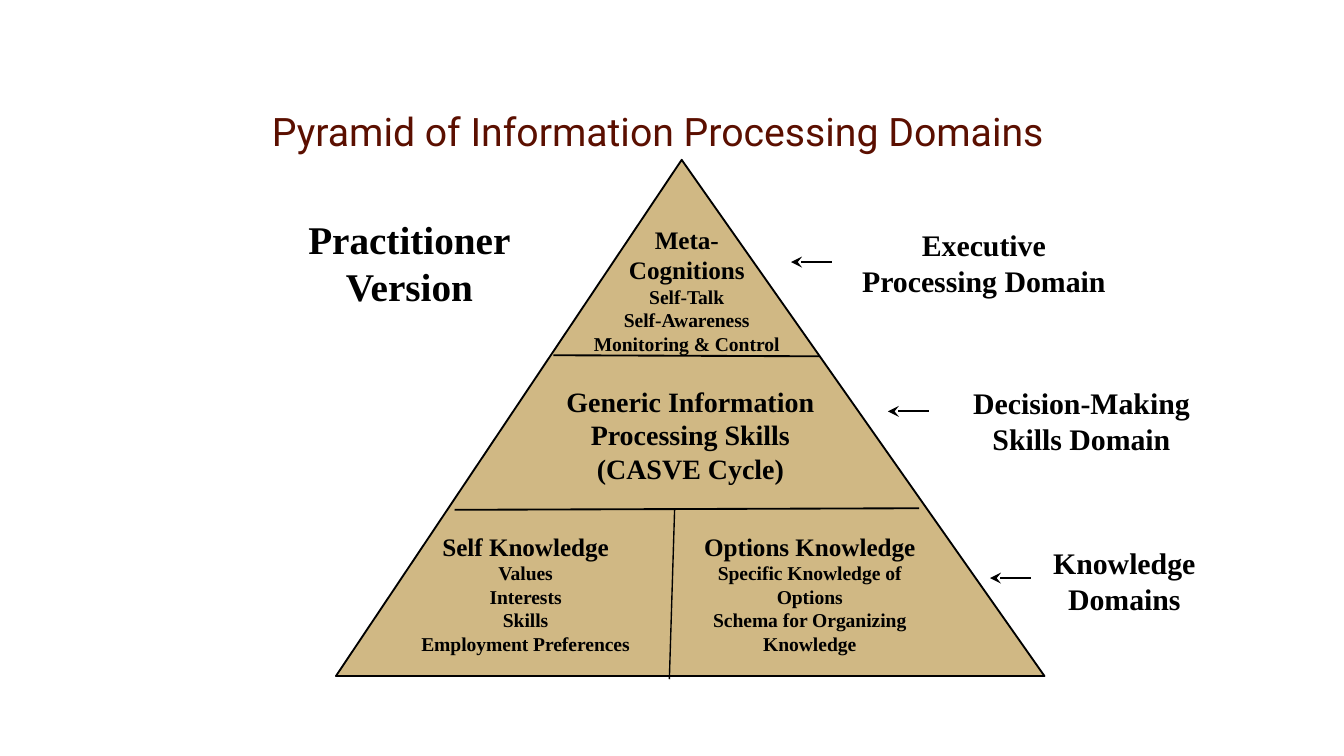
from lxml import etree
from pptx import Presentation
from pptx import util as u
from pptx.dml.color import RGBColor
from pptx.enum import shapes, text
from pptx.oxml.ns import qn

BLACK = RGBColor(0x00, 0x00, 0x00)
GOLD = RGBColor(0xD0, 0xB8, 0x84)
MAROON = RGBColor(0x5B, 0x0F, 0x00)
SERIF = "Times New Roman"
SANS = "Roboto"
HEADING, DETAIL, SKILLS, LABEL, TITLE = 13.5, 10.5, 15, 16, 21
ARROW_LENGTH = 0.77


class PyramidSlide:
    """Holds the style and the current slide; lengths are centimetres."""

    def __init__(self, slide):
        self.slide = slide

    def triangle(self, left, top, width, height, peak):
        shape = self.slide.shapes.add_shape(
            shapes.MSO_SHAPE.ISOSCELES_TRIANGLE,
            u.Cm(left), u.Cm(top), u.Cm(width), u.Cm(height))
        shape.adjustments[0] = peak
        shape.shadow.inherit = False
        shape.fill.solid()
        shape.fill.fore_color.rgb = GOLD
        shape.line.color.rgb = BLACK
        shape.line.width = u.Pt(1)

    def line(self, x1, y1, x2, y2, weight=1, arrow=False):
        connector = self.slide.shapes.add_connector(
            shapes.MSO_CONNECTOR.STRAIGHT,
            u.Cm(x1), u.Cm(y1), u.Cm(x2), u.Cm(y2))
        connector.line.color.rgb = BLACK
        connector.line.width = u.Pt(weight)
        properties = connector._element.spPr
        if arrow:
            outline = properties.find(qn("a:ln"))
            etree.SubElement(outline, qn("a:tailEnd"), type="stealth")
        etree.SubElement(properties, qn("a:effectLst"))

    def text(self, left, top, width, height, lines, font=SERIF,
             color=BLACK, bold=True, anchor=text.MSO_ANCHOR.TOP):
        """Adds centred paragraphs, each given as (wording, size)."""
        box = self.slide.shapes.add_textbox(
            u.Cm(left), u.Cm(top), u.Cm(width), u.Cm(height))
        frame = box.text_frame
        frame.word_wrap = True
        frame.vertical_anchor = anchor
        frame.margin_left = frame.margin_right = u.Cm(0.2)
        frame.margin_top = frame.margin_bottom = u.Cm(0.1)
        frame.text = "\n".join(wording for wording, size in lines)
        for paragraph, (wording, size) in zip(frame.paragraphs, lines):
            paragraph.alignment = text.PP_ALIGN.CENTER
            for run in paragraph.runs:
                run.font.name = font
                run.font.size = u.Pt(size)
                run.font.bold = bold
                run.font.color.rgb = color

    def section(self, left, top, width, height, headings, details):
        lines = [(heading, HEADING) for heading in headings]
        lines += [(detail, DETAIL) for detail in details]
        self.text(left, top, width, height, lines)


def main():
    presentation = Presentation()
    presentation.slide_width = u.Cm(25.4)
    presentation.slide_height = u.Cm(14.28)
    page = PyramidSlide(
        presentation.slides.add_slide(presentation.slide_layouts[6]))

    # Pyramid and its dividing lines
    page.triangle(6.35, 3.02, 13.39, 9.75, peak=0.488)
    page.line(10.46, 6.71, 15.49, 6.73)
    page.line(8.59, 9.63, 17.37, 9.6)
    page.line(12.75, 9.6, 12.65, 12.83, weight=0.75)

    # Title and version
    page.text(3.33, 1.6, 18.21, 1.75,
              [("Pyramid of Information Processing Domains", TITLE)],
              font=SANS, color=MAROON, bold=False,
              anchor=text.MSO_ANCHOR.MIDDLE)
    page.text(5.05, 3.96, 5.38, 1.98, [("Practitioner\vVersion", TITLE)])

    # Sections inside the pyramid
    page.section(10.87, 4.14, 4.22, 2.69, ["Meta-", "Cognitions"],
                 ["Self-Talk", "Self-Awareness", "Monitoring & Control"])
    page.text(9.75, 7.16, 6.6, 2.11,
              [("Generic Information Processing Skills", SKILLS),
               ("(CASVE Cycle)", SKILLS)])
    page.section(7.32, 9.93, 5.23, 2.57, ["Self Knowledge"],
                 ["Values", "Interests", "Skills", "Employment Preferences"])
    page.section(12.83, 9.93, 4.95, 2.57, ["Options Knowledge"],
                 ["Specific Knowledge of\vOptions",
                  "Schema for Organizing\vKnowledge"])

    # Domain labels, each with an arrow to its level
    domains = [
        ("Executive Processing Domain", (15.98, 4.19, 5.23, 2.11), (15.72, 4.95)),
        ("Decision-Making Skills Domain", (17.75, 7.16, 5.38, 1.47), (17.55, 7.77)),
        ("Knowledge Domains", (19.18, 10.19, 4.14, 1.47), (19.48, 10.92)),
    ]
    for name, place, (x, y) in domains:
        page.text(*place, [(name, LABEL)])
        page.line(x, y, x - ARROW_LENGTH, y, arrow=True)

    presentation.save("out.pptx")


if __name__ == "__main__":
    main()
